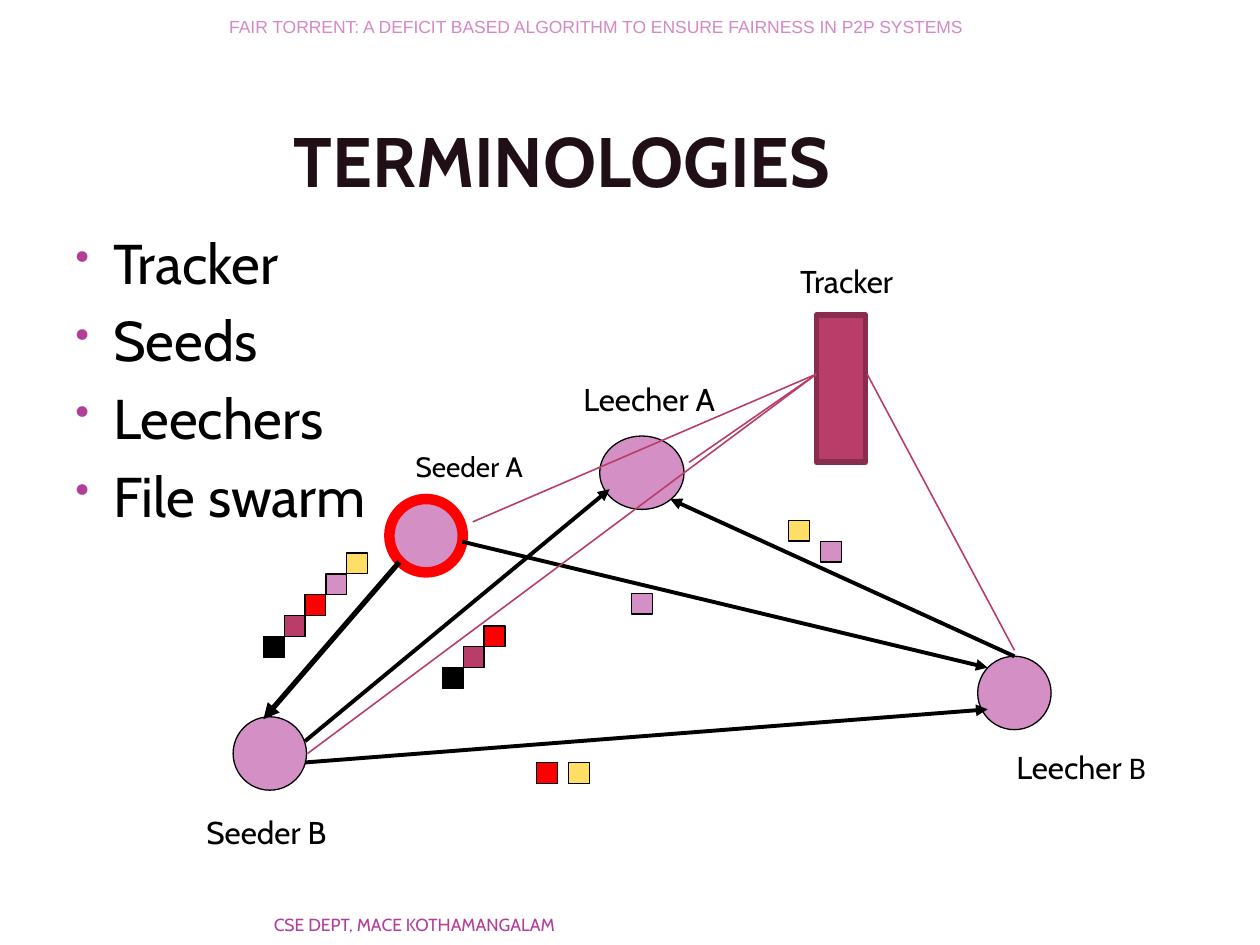
"""Build the TERMINOLOGIES slide, a peer-to-peer file swarm diagram."""
import lxml.etree
import pptx
import pptx.dml.color
import pptx.enum.shapes
import pptx.enum.text
import pptx.oxml.ns
import pptx.util

Cm = pptx.util.Cm
Pt = pptx.util.Pt
ALIGN = pptx.enum.text.PP_ALIGN
ANCHOR = pptx.enum.text.MSO_ANCHOR
SHAPE = pptx.enum.shapes.MSO_SHAPE

BLACK, RED, YELLOW = "000000", "FF0000", "FFDE66"
ORCHID, PURPLE = "D490C5", "B13F9A"
CRIMSON, DARK_CRIMSON = "B83D68", "882D4D"
PACKET = 0.42


def rgb(code):
    """Turn a hex string into a colour."""
    return pptx.dml.color.RGBColor.from_string(code)


def add_xml(parent, tag, **attributes):
    """Append a drawing element with the given attributes."""
    return lxml.etree.SubElement(parent, pptx.oxml.ns.qn(tag), attributes)


def add_bullet(paragraph, indent):
    """Give a paragraph a coloured bullet with a hanging indent."""
    properties = paragraph._p.get_or_add_pPr()
    properties.set("marL", str(int(Cm(indent))))
    properties.set("indent", str(-int(Cm(indent))))
    colour = add_xml(properties, "a:buClr")
    add_xml(colour, "a:srgbClr", val=PURPLE)
    add_xml(properties, "a:buSzPct", val="73000")
    add_xml(properties, "a:buChar", char="•")


def add_text(slide, box, paragraphs, size=18, color=BLACK, font="Cabin", bold=False,
             align=ALIGN.LEFT, anchor=ANCHOR.TOP, wrap=True, margins=(0.25, 0.13),
             bullets=False, space_before=0):
    """Add a text box; each paragraph is a string or a list of (text, font) runs."""
    frame = slide.shapes.add_textbox(*map(Cm, box)).text_frame
    frame.word_wrap = wrap
    frame.vertical_anchor = anchor
    frame.margin_left = frame.margin_right = Cm(margins[0])
    frame.margin_top = frame.margin_bottom = Cm(margins[1])
    for index, content in enumerate(paragraphs):
        paragraph = frame.add_paragraph() if index else frame.paragraphs[0]
        paragraph.alignment = align
        if index and space_before:
            paragraph.space_before = Pt(space_before)
        if bullets:
            add_bullet(paragraph, 0.76)
        runs = [(content, font)] if isinstance(content, str) else content
        for words, face in runs:
            run = paragraph.add_run()
            run.text = words
            run.font.name = face
            run.font.size = Pt(size)
            run.font.bold = bold
            run.font.color.rgb = rgb(color)


def add_figure(slide, kind, box, fill, line=BLACK, width=0.75):
    """Add a filled and outlined preset shape."""
    figure = slide.shapes.add_shape(kind, *map(Cm, box))
    figure.shadow.inherit = False
    figure.fill.solid()
    figure.fill.fore_color.rgb = rgb(fill)
    figure.line.color.rgb = rgb(line)
    figure.line.width = Pt(width)


def add_packets(slide, start, step, colors):
    """Add a run of small file pieces at equal steps."""
    for index, color in enumerate(colors):
        left, top = (origin + index * gap for origin, gap in zip(start, step))
        add_figure(slide, SHAPE.RECTANGLE, (left, top, PACKET, PACKET), color)


def add_link(slide, start, end, color, width, arrow=False):
    """Add a straight line, with an arrowhead at its end if asked."""
    link = slide.shapes.add_connector(
        pptx.enum.shapes.MSO_CONNECTOR.STRAIGHT, *map(Cm, start + end))
    link.line.color.rgb = rgb(color)
    link.line.width = Pt(width)
    if arrow:
        outline = link._element.spPr.find(pptx.oxml.ns.qn("a:ln"))
        add_xml(outline, "a:tailEnd", type="triangle")
    add_xml(link._element.spPr, "a:effectLst")


def add_peers(slide):
    """Add the tracker and the four peers with their labels."""
    peers = [
        ((7.85, 10.06, 1.48, 1.48), RED, 6),
        ((4.7, 14.45, 1.48, 1.48), BLACK, 0.75),
        ((19.71, 13.23, 1.48, 1.48), BLACK, 0.75),
        ((12.09, 8.79, 1.7, 1.48), BLACK, 0.75),
    ]
    for box, line, width in peers:
        add_figure(slide, SHAPE.OVAL, box, ORCHID, line, width)
    add_figure(slide, SHAPE.RECTANGLE, (16.46, 6.35, 0.99, 2.97),
               CRIMSON, DARK_CRIMSON, 3.15)

    labels = [
        ((8.13, 8.94, 2.74, 0.94), "Seeder A", 16),
        ((3.91, 16.26, 3.02, 1.02), "Seeder B", 18),
        ((11.51, 7.54, 3.35, 1.02), "Leecher A", 18),
        ((20.24, 14.94, 3.3, 1.02), [("Leecher", "Cabin"), (" B", "Calibri")], 18),
        ((15.88, 5.16, 2.77, 1.02), "Tracker", 18),
    ]
    for box, name, size in labels:
        add_text(slide, box, [name], size=size, wrap=False)


def add_transfers(slide):
    """Add the transfer arrows, the file pieces and the tracker links."""
    transfers = [
        ((8.05, 11.33), (5.31, 14.5), 3),
        ((9.32, 10.92), (19.91, 13.46), 2.25),
        ((20.45, 13.23), (13.51, 10.06), 2.25),
        ((6.15, 14.94), (12.29, 9.86), 2.25),
        ((6.15, 15.37), (19.91, 14.3), 2.25),
    ]
    for start, end, width in transfers:
        add_link(slide, start, end, BLACK, width, arrow=True)

    climb = (PACKET, -PACKET)
    add_packets(slide, (5.31, 12.83), climb, [BLACK, CRIMSON, RED, ORCHID, YELLOW])
    add_packets(slide, (8.92, 13.46), climb, [BLACK, CRIMSON, RED])
    add_packets(slide, (10.82, 15.37), (0.64, 0), [RED, YELLOW])
    add_packets(slide, (15.9, 10.49), (0.64, PACKET), [YELLOW, ORCHID])
    add_packets(slide, (12.73, 11.96), (0, 0), [ORCHID])

    tracker_left, tracker_right = (16.46, 7.54), (17.48, 7.54)
    for peer in [(13.89, 9.32), (9.53, 10.52), (6.2, 15.19)]:
        add_link(slide, peer, tracker_left, CRIMSON, 0.9)
    add_link(slide, tracker_right, (20.45, 13.11), CRIMSON, 0.9)


def main():
    """Build and save the slide."""
    deck = pptx.Presentation()
    deck.slide_width, deck.slide_height = Cm(25.4), Cm(19.05)
    slide = deck.slides.add_slide(deck.slide_layouts[6])

    add_text(slide, (1.27, 0.89, 20.12, 3.18), ["TERMINOLOGIES"], size=40,
             color="210F17", bold=True, align=ALIGN.CENTER, anchor=ANCHOR.BOTTOM,
             margins=(0.13, 0))
    add_text(slide, (1.27, 4.47, 20.12, 13.46),
             ["Tracker", "Seeds", "Leechers", "File swarm"],
             size=32, bullets=True, space_before=6)
    add_peers(slide)
    add_transfers(slide)
    add_text(slide, (1.27, 18.21, 10.16, 0.64), ["CSE DEPT, MACE KOTHAMANGALAM"],
             size=10, color=PURPLE, align=ALIGN.RIGHT, anchor=ANCHOR.BOTTOM,
             margins=(0.25, 0))
    add_text(slide, (4.37, 0.2, 17.27, 0.69),
             ["FAIR TORRENT: A DEFICIT BASED ALGORITHM TO ENSURE FAIRNESS IN P2P SYSTEMS"],
             size=10, color="D488C5", font="Arial")
    deck.save("out.pptx")


if __name__ == "__main__":
    main()
